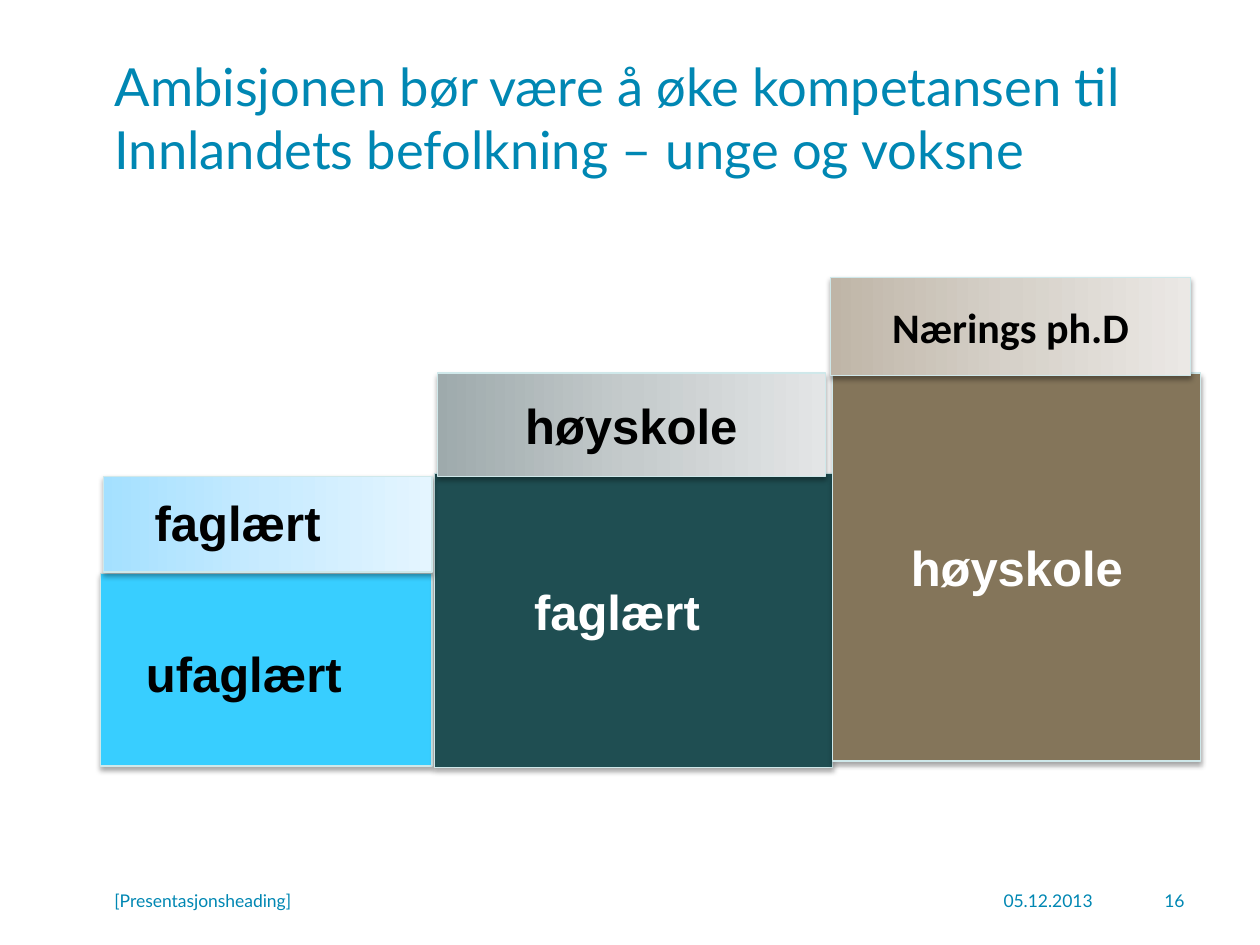
import dataclasses

import pptx
import pptx.dml.color
import pptx.enum.shapes
import pptx.enum.text
import pptx.oxml
import pptx.oxml.ns
import pptx.util
from lxml import etree

PX = 9144  # 100 px to the inch
ALIGN = pptx.enum.text.PP_ALIGN
ANCHOR = pptx.enum.text.MSO_ANCHOR
AUTO_SIZE = pptx.enum.text.MSO_AUTO_SIZE


@dataclasses.dataclass(frozen=True)
class Theme:
    heading_font: str = "Lato"
    label_font: str = "Arial"
    degree_font: str = "Calibri"
    title_size: int = 30
    label_size: int = 28
    degree_size: int = 24
    footer_size: int = 10
    accent: str = "0087B3"
    dark: str = "000000"
    light: str = "FFFFFF"
    edge: str = "CFE8EA"
    unskilled: str = "38CEFF"
    skilled: str = "1F4E52"
    college: str = "84755A"
    unskilled_fade: tuple = ("A4E0FF", "C8EBFF", "E4F5FF")
    skilled_fade: tuple = ("9EAAAC", "C5CBCC", "E3E5E6")
    college_fade: tuple = ("BFB5A7", "D6D1C9", "EBE8E5")


THEME = Theme()


def emu(box):
    return [pptx.util.Emu(length * PX) for length in box]


def rgb(color):
    return pptx.dml.color.RGBColor.from_string(color)


def write(frame, text, font, size, color, bold=False, align=ALIGN.LEFT, anchor=ANCHOR.MIDDLE):
    frame.word_wrap = True
    frame.auto_size = AUTO_SIZE.NONE
    frame.vertical_anchor = anchor
    frame.text = text
    para = frame.paragraphs[0]
    para.alignment = align
    para.font.name = font
    para.font.size = pptx.util.Pt(size)
    para.font.bold = bold
    para.font.color.rgb = rgb(color)


def fill_fade(shape, colors):
    """Fill with evenly spaced colour stops from left to right."""
    shape.fill.gradient()
    shape.fill.gradient_angle = 0
    stops = shape.fill._xPr.find(".//" + pptx.oxml.ns.qn("a:gsLst"))
    for stop in list(stops):
        stops.remove(stop)
    for index, color in enumerate(colors):
        position = 100000 * index // (len(colors) - 1)
        stop = etree.SubElement(stops, pptx.oxml.ns.qn("a:gs"), pos=str(position))
        etree.SubElement(stop, pptx.oxml.ns.qn("a:srgbClr"), val=color)


def add_soft_shadow(shape):
    shape.shadow.inherit = False
    effects = shape._element.spPr.find(pptx.oxml.ns.qn("a:effectLst"))
    effects.append(pptx.oxml.parse_xml(
        f'<a:outerShdw {pptx.oxml.ns.nsdecls("a")} blurRad="39370" dist="22860" '
        'dir="5400000" rotWithShape="0"><a:srgbClr val="000000">'
        '<a:alpha val="35000"/></a:srgbClr></a:outerShdw>'))


def add_block(page, box, fill):
    """Add a shadowed rectangle; a tuple of colours gives a fade."""
    block = page.shapes.add_shape(pptx.enum.shapes.MSO_SHAPE.RECTANGLE, *emu(box))
    if isinstance(fill, tuple):
        fill_fade(block, fill)
    else:
        block.fill.solid()
        block.fill.fore_color.rgb = rgb(fill)
    block.line.color.rgb = rgb(THEME.edge)
    block.line.width = pptx.util.Pt(0.75)
    add_soft_shadow(block)
    return block


def add_centred_block(page, box, fill, text, color, font=THEME.label_font,
                      size=THEME.label_size):
    block = add_block(page, box, fill)
    write(block.text_frame, text, font, size, color, True, ALIGN.CENTER)


def add_offset_block(page, box, fill, text, color, offset, width):
    """Add a block whose label is a text box at an offset from its corner."""
    add_block(page, box, fill)
    left, top = box[0] + offset[0], box[1] + offset[1]
    label = page.shapes.add_textbox(*emu((left, top, width, 57)))
    write(label.text_frame, text, THEME.label_font, THEME.label_size, color, True,
          anchor=ANCHOR.TOP)


def add_title(page, box, text):
    title = page.shapes.title
    title.left, title.top, title.width, title.height = emu(box)
    write(title.text_frame, text, THEME.heading_font, THEME.title_size, THEME.accent)


def add_staircase(page, box):
    """Three steps of education, each topped by the level to reach next."""
    left, top = box

    def place(x, y, width, height):
        return left + x, top + y, width, height

    add_offset_block(page, place(0, 235, 263, 153), THEME.unskilled,
                     "ufaglært", THEME.dark, (26, 51), 178)
    add_offset_block(page, place(265, 156, 316, 233), THEME.skilled,
                     "faglært", THEME.light, (69, 81), 184)
    add_centred_block(page, place(581, 76, 292, 308), THEME.college,
                      "høyskole", THEME.light)
    add_offset_block(page, place(2, 158, 261, 76), THEME.unskilled_fade,
                     "faglært", THEME.dark, (31, 8), 184)
    add_centred_block(page, place(267, 76, 308, 82), THEME.skilled_fade,
                      "høyskole", THEME.dark)
    add_centred_block(page, place(579, 0, 286, 78), THEME.college_fade,
                      "Nærings ph.D", THEME.dark, THEME.degree_font, THEME.degree_size)


def add_footer(page, box):
    left, top, width, height = box
    parts = (
        ("[Presentasjonsheading]", 0, 462, ALIGN.LEFT),
        ("05.12.2013", width - 215, 142, ALIGN.RIGHT),
        ("16", width - 67, 67, ALIGN.RIGHT),
    )
    for text, x, part_width, align in parts:
        part = page.shapes.add_textbox(*emu((left + x, top, part_width, height)))
        write(part.text_frame, text, THEME.heading_font, THEME.footer_size,
              THEME.accent, align=align)


def main():
    deck = pptx.Presentation()
    deck.slide_width, deck.slide_height = emu((1000, 750))
    page = deck.slides.add_slide(deck.slide_layouts.get_by_name("Title Only"))
    add_title(page, (81, 30, 869, 125),
              "Ambisjonen bør være å øke kompetansen til "
              "Innlandets befolkning – unge og voksne")
    add_staircase(page, (80, 220))
    add_footer(page, (81, 695, 869, 40))
    deck.save("out.pptx")


if __name__ == "__main__":
    main()
